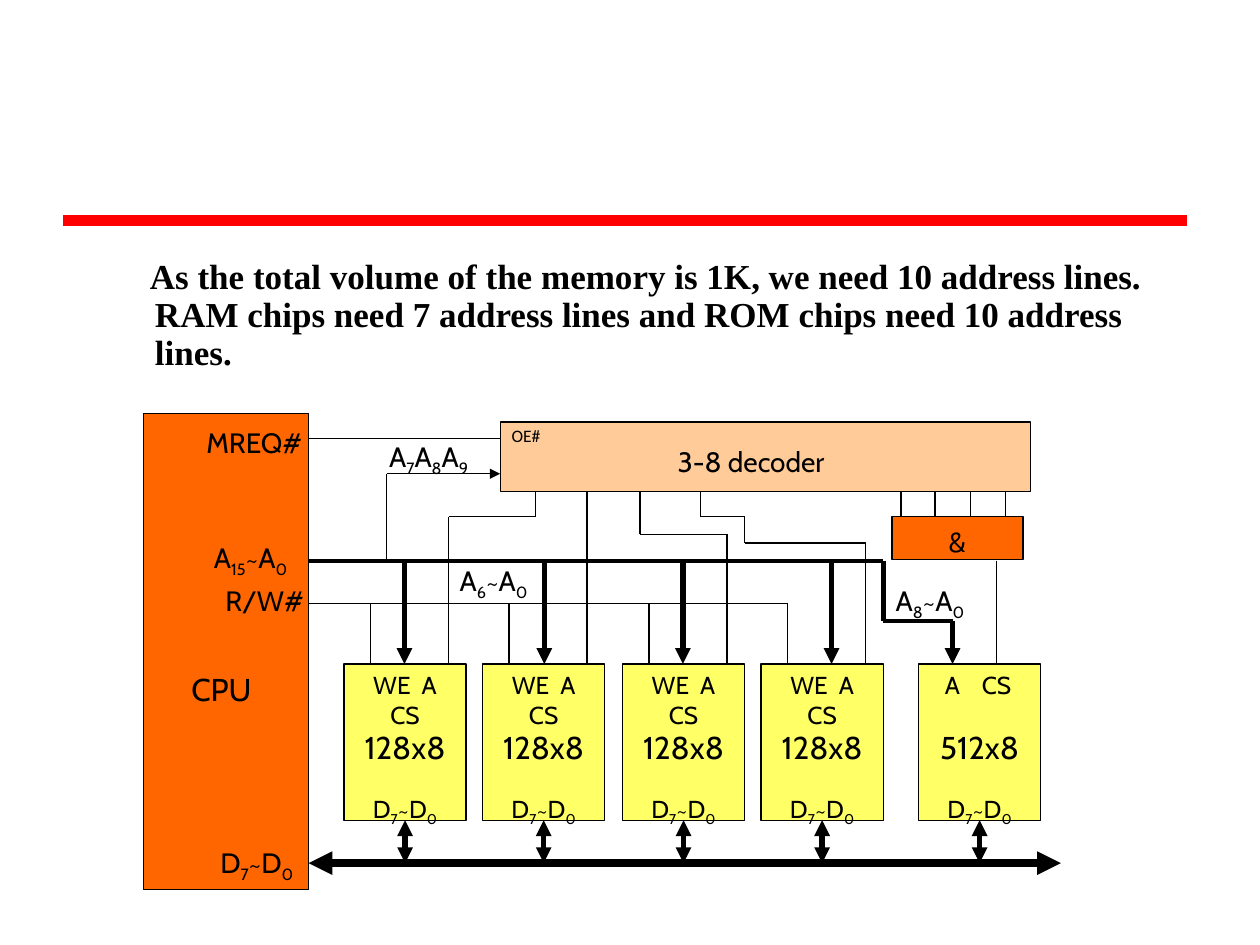
from lxml import etree
from pptx import Presentation
from pptx.dml.color import RGBColor
from pptx.enum.shapes import MSO_CONNECTOR, MSO_SHAPE
from pptx.enum.text import MSO_ANCHOR, PP_ALIGN
from pptx.oxml.ns import qn
from pptx.util import Inches, Pt

STRAIGHT, RECT = MSO_CONNECTOR.STRAIGHT, MSO_SHAPE.RECTANGLE
LEFT, CENTER, TOP = PP_ALIGN.LEFT, PP_ALIGN.CENTER, MSO_ANCHOR.TOP
BLACK, RED, ORANGE, PEACH, YELLOW = "000000", "FF0000", "FF6600", "FFCC99", "FFFF66"
THIN, BUS, TAP, DATA_BUS = 0.75, 2.25, 3, 4.5

BODY = ("As the total volume of the memory is 1K, we need 10 address lines. "
        "RAM chips need 7 address lines and ROM chips need 10 address lines.")
DATA_PINS = ["D", "7", "~D", "0"]

RAM_LEFTS, ROM_LEFT = [2.73, 3.83, 4.94, 6.04], 7.29
CHIP_TOP, CHIP_W, CHIP_H = 5.27, 0.97, 1.24
CHIP_BOTTOM, CHIP_MID = CHIP_TOP + CHIP_H, CHIP_W / 2
WE_PIN, CS_PIN = 0.21, 0.83
ROM_A, ROM_CS = 7.56, 7.91
CPU_RIGHT, ADDRESS_Y, RW_Y, DATA_Y = 2.45, 4.45, 4.79, 6.85
DECODER_LEFT, DECODER_BOTTOM, GATE_TOP = 3.97, 3.9, 4.1

BLOCKS = [
    (1.14, 3.28, 1.31, 3.78, ORANGE),
    (DECODER_LEFT, 3.35, 4.21, 0.55, PEACH),
    (7.08, GATE_TOP, 1.04, 0.34, ORANGE),
] + [(x, CHIP_TOP, CHIP_W, CHIP_H, YELLOW) for x in RAM_LEFTS + [ROM_LEFT]]

ADDRESS_TAPS = [3.21, 4.32, 5.42, 6.6]
GATE_INPUTS = [7.15, 7.42, 7.7, 7.98]
SELECT_ROUTES = [
    [(4.25, DECODER_BOTTOM), (4.25, 4.1), (3.56, 4.1)],
    [(4.66, DECODER_BOTTOM)],
    [(5.08, DECODER_BOTTOM), (5.08, 4.24), (5.77, 4.24)],
    [(5.56, DECODER_BOTTOM), (5.56, 4.1), (5.91, 4.1), (5.91, 4.31), (6.87, 4.31)],
]

# left, top, width, height, size, runs (every second run is a subscript)
LABELS = [
    (1.42, 5.27, 1.17, 0.44, 18, ["CPU"]),
    (1.54, 3.33, 0.98, 0.37, 16, ["MREQ#"]),
    (1.6, 4.24, 1.17, 0.32, 16, ["A", "15", "~A", "0"]),
    (1.69, 4.58, 1.17, 0.32, 16, ["R/W#"]),
    (1.65, 6.66, 0.9, 0.32, 16, DATA_PINS),
    (5.28, 3.48, 1.8, 0.37, 16, ["3-8 decoder"]),
    (2.99, 3.44, 0.98, 0.37, 16, ["A", "7", "A", "8", "A", "9"]),
    (3.55, 4.42, 1.17, 0.32, 16, ["A", "6", "~A", "0"]),
    (7.01, 4.58, 0.86, 0.37, 16, ["A", "8", "~A", "0"]),
    (7.43, 4.11, 0.41, 0.32, 16, ["&"]),
]


def rgb(color):
    """Turn a hex string into a colour."""
    return RGBColor.from_string(color)


def add_run(p, text, size, font, bold=False):
    """Add one formatted run to a paragraph."""
    r = p.add_run()
    r.text = text
    r.font.size, r.font.name, r.font.bold = Pt(size), font, bold
    r.font.color.rgb = rgb(BLACK)
    return r


def add_block(s, x, y, w, h, fill):
    """Add an outlined rectangle."""
    sp = s.shapes.add_shape(RECT, Inches(x), Inches(y), Inches(w), Inches(h))
    sp.shadow.inherit = False
    sp.fill.solid()
    sp.fill.fore_color.rgb = rgb(fill)
    sp.line.color.rgb = rgb(BLACK)
    sp.line.width = Pt(THIN)


def add_label(s, x, y, w, h, size, parts, align=LEFT, font="Cabin", inset=None):
    """Add a label whose every second run is a subscript."""
    tf = s.shapes.add_textbox(Inches(x), Inches(y), Inches(w), Inches(h)).text_frame
    tf.word_wrap, tf.vertical_anchor = True, TOP
    if inset is not None:
        tf.margin_left = tf.margin_right = Inches(inset)
        tf.margin_top = tf.margin_bottom = Inches(inset)
    p = tf.paragraphs[0]
    p.alignment = align
    for i, text in enumerate(parts):
        r = add_run(p, text, size, font)
        if i % 2:
            r._r.get_or_add_rPr().set("baseline", "-25000")
    return p


def add_wire(s, points, width=THIN, head=False, tail=False, color=BLACK):
    """Join points with straight connectors, with arrowheads at the ends."""
    last = len(points) - 2
    for i, ((x1, y1), (x2, y2)) in enumerate(zip(points, points[1:])):
        c = s.shapes.add_connector(STRAIGHT, Inches(x1), Inches(y1), Inches(x2), Inches(y2))
        c.line.color.rgb = rgb(color)
        c.line.width = Pt(width)
        ln = c.line._get_or_add_ln()
        if head and i == 0:
            etree.SubElement(ln, qn("a:headEnd"), type="triangle")
        if tail and i == last:
            etree.SubElement(ln, qn("a:tailEnd"), type="triangle")
        etree.SubElement(c._element.spPr, qn("a:effectLst"))


def add_body(s):
    """Fill the body placeholder and drop the unused title."""
    title, body = s.placeholders[0], s.placeholders[1]
    title._element.getparent().remove(title._element)
    body.left, body.top, body.width, body.height = map(Inches, (0.75, 2.01, 8.5, 1.9))
    p = body.text_frame.paragraphs[0]
    p.line_spacing, p.space_before = 0.9, Pt(4)
    pPr = p._p.get_or_add_pPr()
    pPr.set("marL", str(Inches(0.38)))
    pPr.set("indent", str(Inches(-0.04)))
    etree.SubElement(pPr, qn("a:buNone"))
    add_run(p, BODY, 20, "Times New Roman", True)


def add_wires(s):
    """Route the control, address, select and data lines."""
    add_wire(s, [(CPU_RIGHT, 3.48), (DECODER_LEFT, 3.48)])
    add_wire(s, [(3.07, ADDRESS_Y), (3.07, 3.76), (DECODER_LEFT, 3.76)], tail=True)
    add_wire(s, [(CPU_RIGHT, RW_Y), (RAM_LEFTS[-1] + WE_PIN, RW_Y)])
    add_wire(s, [(CPU_RIGHT, ADDRESS_Y), (7.01, ADDRESS_Y)], BUS)
    add_wire(s, [(7.01, ADDRESS_Y), (7.01, 4.93)], TAP)
    add_wire(s, [(7.01, 4.93), (ROM_A, 4.93)], BUS)
    add_wire(s, [(ROM_A, 4.93), (ROM_A, CHIP_TOP)], TAP, tail=True)
    add_wire(s, [(ROM_CS, ADDRESS_Y), (ROM_CS, CHIP_TOP)])
    add_wire(s, [(CPU_RIGHT, DATA_Y), (8.42, DATA_Y)], DATA_BUS, head=True, tail=True)
    for x, tap, route in zip(RAM_LEFTS, ADDRESS_TAPS, SELECT_ROUTES):
        add_wire(s, [(x + WE_PIN, RW_Y), (x + WE_PIN, CHIP_TOP)])
        add_wire(s, [(tap, ADDRESS_Y), (tap, CHIP_TOP)], TAP, tail=True)
        add_wire(s, route + [(x + CS_PIN, CHIP_TOP)])
    for x in GATE_INPUTS:
        add_wire(s, [(x, DECODER_BOTTOM), (x, GATE_TOP)])
    for x in RAM_LEFTS + [ROM_LEFT]:
        mid = x + CHIP_MID
        add_wire(s, [(mid, CHIP_BOTTOM), (mid, DATA_Y)], TAP, head=True, tail=True)


def add_labels(s):
    """Write the signal, block and chip labels."""
    for label in LABELS:
        add_label(s, *label)
    add_label(s, 4.01, 3.36, 0.33, 0.29, 10, ["OE#"], CENTER, "Calibri", 0.01)
    for x in RAM_LEFTS:
        p = add_label(s, x, CHIP_TOP, CHIP_W, 0.29, 14, ["WE  A"], CENTER)
        p.add_line_break()
        add_run(p, "CS", 14, "Cabin")
    for pin, x in (("A", ROM_A), ("CS", ROM_CS)):
        add_label(s, x - 0.25, CHIP_TOP, 0.5, 0.29, 14, [pin], CENTER)
    for x in RAM_LEFTS + [ROM_LEFT]:
        size = "512x8" if x == ROM_LEFT else "128x8"
        add_label(s, x, 5.73, CHIP_W, 0.35, 18, [size], CENTER)
        add_label(s, x, 6.25, CHIP_W, 0.29, 14, DATA_PINS, CENTER)


def main():
    """Build the memory connection slide."""
    prs = Presentation()
    prs.slide_width, prs.slide_height = Inches(10), Inches(7.5)
    s = prs.slides.add_slide(prs.slide_layouts[1])
    add_wire(s, [(0.5, 1.75), (9.42, 1.75)], 6, color=RED)
    add_body(s)
    for block in BLOCKS:
        add_block(s, *block)
    add_wires(s)
    add_labels(s)
    prs.save("out.pptx")


if __name__ == "__main__":
    main()
